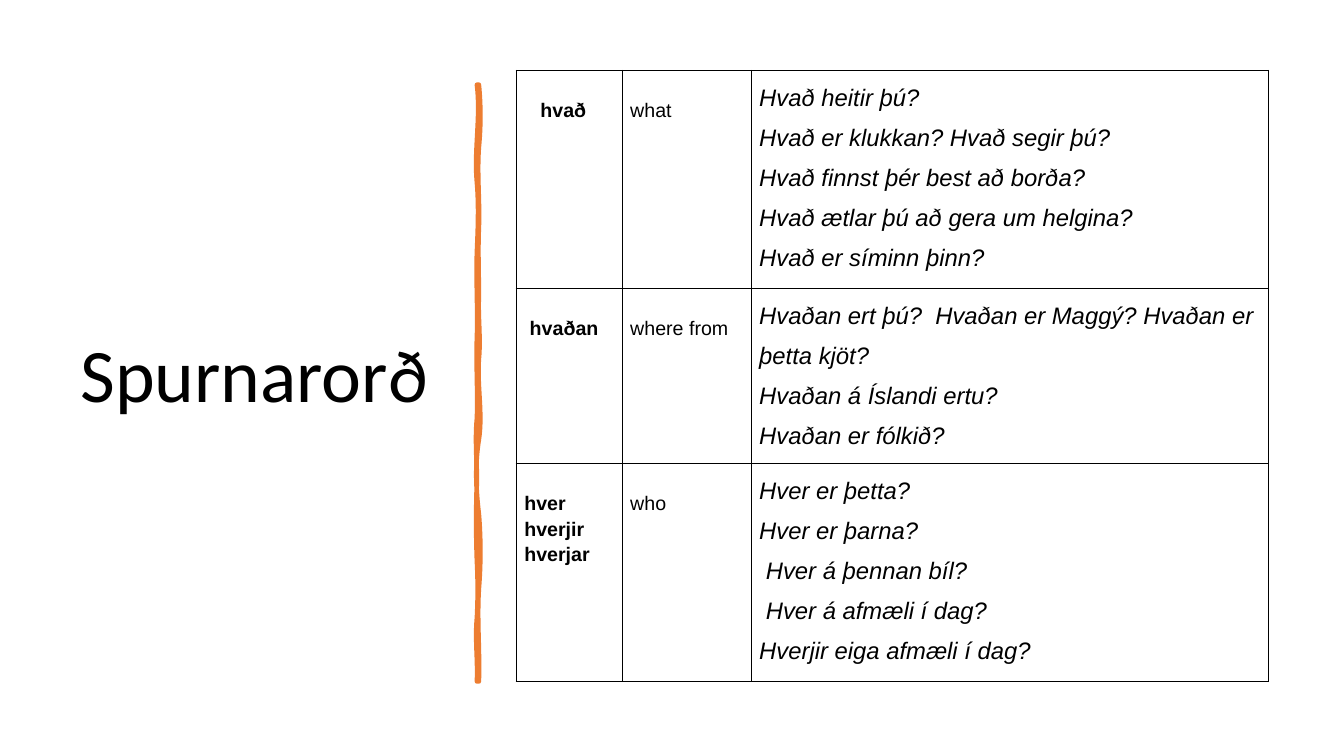
from dataclasses import dataclass
from typing import NamedTuple

from lxml import etree
from pptx import Presentation
from pptx.dml.color import RGBColor
from pptx.enum import text as t
from pptx.oxml import ns
from pptx.util import Emu, Inches, Pt

BLACK = "000000"
ORANGE = "ED7D31"
RULE_TOP, RULE_BOTTOM = 0.84, 6.76
RULE_LEFT, RULE_RIGHT = 4.73, 4.75
COLUMN_WIDTHS = (1.05, 1.28, 5.13)
ROW_HEIGHTS = (2.16, 1.74, 2.16)


class Bend(NamedTuple):
    """One curve of a brush edge: two control x values and the y where it ends."""
    first_x: float
    second_x: float
    end_y: float


class Line(NamedTuple):
    text: str
    indent: float = 0


@dataclass
class CellStyle:
    size: float
    spacing: float
    top: float
    bold: bool = False
    italic: bool = False


@dataclass
class Entry:
    words: list[Line]
    meaning: str
    examples: list[Line]


@dataclass
class Contour:
    right: list[Bend]
    left: list[Bend]
    hidden_part: dict[str, str]


WORD = CellStyle(14, 1.15, 0.26, bold=True)
MEANING = CellStyle(14, 1.15, 0.26)
EXAMPLE = CellStyle(17, 1.5, 0.01, italic=True)

ENTRIES = [
    Entry([Line("hvað", 0.16)], "what", [
        Line("Hvað heitir þú?"),
        Line("Hvað er klukkan? Hvað segir þú?"),
        Line("Hvað finnst þér best að borða?"),
        Line("Hvað ætlar þú að gera um helgina?"),
        Line("Hvað er síminn þinn?")]),
    Entry([Line(" hvaðan")], "where from", [
        Line("Hvaðan ert þú?  Hvaðan er Maggý? Hvaðan er þetta kjöt?"),
        Line("Hvaðan á Íslandi ertu?"),
        Line("Hvaðan er fólkið?")]),
    Entry([Line("hver"), Line("hverjir"), Line("hverjar")], "who", [
        Line("Hver er þetta?"),
        Line("Hver er þarna?"),
        Line(" Hver á þennan bíl?"),
        Line(" Hver á afmæli í dag?"),
        Line("Hverjir eiga afmæli í dag?")]),
]

OUTLINE = Contour(
    [Bend(4.77, 4.77, 1.46), Bend(4.73, 4.76, 2.26), Bend(4.74, 4.75, 2.94),
     Bend(4.74, 4.77, 3.56), Bend(4.73, 4.79, 4.36), Bend(4.71, 4.72, 5.1),
     Bend(4.77, 4.77, 5.84), Bend(4.73, 4.76, RULE_BOTTOM)],
    [Bend(4.74, 4.71, 6.13), Bend(4.74, 4.74, 5.57), Bend(4.72, 4.72, 4.77),
     Bend(4.73, 4.71, 4.15), Bend(4.74, 4.72, 3.35), Bend(4.74, 4.72, 2.5),
     Bend(4.74, 4.75, 1.81), Bend(4.7, 4.77, RULE_TOP)],
    {"fill": "none"})
BODY = Contour(
    [Bend(4.75, 4.72, 1.52), Bend(4.77, 4.74, 2.08), Bend(4.76, 4.74, 2.94),
     Bend(4.76, 4.73, 3.62), Bend(4.77, 4.77, 4.3), Bend(4.72, 4.75, 5.16),
     Bend(4.75, 4.74, 5.78), Bend(4.76, 4.74, RULE_BOTTOM)],
    [Bend(4.7, 4.74, 6.13), Bend(4.72, 4.75, 5.39), Bend(4.71, 4.76, 4.71),
     Bend(4.7, 4.77, 3.86), Bend(4.69, 4.74, 3), Bend(4.71, 4.71, 2.38),
     Bend(4.74, 4.74, 1.64), Bend(4.71, 4.75, RULE_TOP)],
    {"stroke": "0"})


def color(value: str) -> RGBColor:
    return RGBColor.from_string(value)


def add_run(paragraph, wording: str, font_name: str, size: float,
            bold: bool = False, italic: bool = False) -> None:
    run = paragraph.add_run()
    run.text = wording
    font = run.font
    font.name, font.size, font.bold, font.italic = font_name, Pt(size), bold, italic
    font.color.rgb = color(BLACK)


def add_title(slide) -> None:
    title = slide.shapes.add_textbox(Inches(0.7), Inches(0.69), Inches(3.74), Inches(6.11))
    frame = title.text_frame
    frame.word_wrap = True
    frame.vertical_anchor = t.MSO_ANCHOR.MIDDLE
    frame.paragraphs[0].line_spacing = 0.9
    add_run(frame.paragraphs[0], "Spurnarorð", "Calibri", 54)


def add_step(outline, tag: str, points: list[tuple[float, float]]) -> None:
    """Append one path command, with points measured from the rule's top left."""
    step = etree.SubElement(outline, ns.qn(f"a:{tag}"))
    for x, y in points:
        etree.SubElement(step, ns.qn("a:pt"), x=str(Inches(x - RULE_LEFT)),
                         y=str(Inches(y - RULE_TOP)))


def add_edge(outline, x: float, start_y: float, bends: list[Bend]) -> None:
    for bend in bends:
        third = (bend.end_y - start_y) / 3
        add_step(outline, "cubicBezTo", [(bend.first_x, start_y + third),
                                         (bend.second_x, bend.end_y - third),
                                         (x, bend.end_y)])
        start_y = bend.end_y


def add_brush_rule(slide) -> None:
    left, right, top, bottom = map(Inches, (RULE_LEFT, RULE_RIGHT, RULE_TOP, RULE_BOTTOM))
    builder = slide.shapes.build_freeform(right, top)
    builder.add_line_segments([(right, bottom), (left, bottom), (left, top)])
    brush = builder.convert_to_shape()
    brush.shadow.inherit = False
    brush.fill.solid()
    brush.fill.fore_color.rgb = color(ORANGE)
    brush.line.color.rgb = color(ORANGE)
    brush.line.width = Pt(3.25)
    etree.SubElement(brush.line._get_or_add_ln(), ns.qn("a:round"))

    outlines = next(brush._element.iter(ns.qn("a:pathLst")))
    size = {"w": str(right - left), "h": str(bottom - top)}
    outlines.clear()
    for contour in (OUTLINE, BODY):
        outline = etree.SubElement(outlines, ns.qn("a:path"), **size, **contour.hidden_part)
        add_step(outline, "moveTo", [(RULE_RIGHT, RULE_TOP)])
        add_edge(outline, RULE_RIGHT, RULE_TOP, contour.right)
        add_step(outline, "lnTo", [(RULE_LEFT, RULE_BOTTOM)])
        add_edge(outline, RULE_LEFT, RULE_BOTTOM, contour.left)
        add_step(outline, "close", [])


def add_borders(cell) -> None:
    properties = cell._tc.get_or_add_tcPr()
    for side in ("lnL", "lnR", "lnT", "lnB"):
        border = etree.SubElement(properties, ns.qn(f"a:{side}"), w=str(Pt(1)))
        fill = etree.SubElement(border, ns.qn("a:solidFill"))
        etree.SubElement(fill, ns.qn("a:srgbClr"), val=BLACK)


def fill_cell(cell, lines: list[Line], style: CellStyle) -> None:
    add_borders(cell)
    cell.fill.background()
    cell.margin_left = cell.margin_right = Inches(0.08)
    cell.margin_top, cell.margin_bottom = Inches(style.top), Emu(0)
    cell.vertical_anchor = t.MSO_ANCHOR.TOP
    frame = cell.text_frame
    for index, line in enumerate(lines):
        paragraph = frame.add_paragraph() if index else frame.paragraphs[0]
        paragraph.line_spacing = style.spacing
        if line.indent:
            paragraph._p.get_or_add_pPr().set("marL", str(Inches(line.indent)))
        add_run(paragraph, line.text, "Arial", style.size, style.bold, style.italic)


def add_question_table(slide) -> None:
    table = slide.shapes.add_table(
        len(ENTRIES), len(COLUMN_WIDTHS), Inches(5.12), Inches(0.7),
        Inches(sum(COLUMN_WIDTHS)), Inches(sum(ROW_HEIGHTS))).table
    table.first_row = table.horz_banding = False
    for column, width in zip(table.columns, COLUMN_WIDTHS):
        column.width = Inches(width)
    for row, height, entry in zip(table.rows, ROW_HEIGHTS, ENTRIES):
        row.height = Inches(height)
        word, meaning, examples = row.cells
        fill_cell(word, entry.words, WORD)
        fill_cell(meaning, [Line(entry.meaning)], MEANING)
        fill_cell(examples, entry.examples, EXAMPLE)


def main() -> None:
    deck = Presentation()
    deck.slide_width, deck.slide_height = Inches(13.33), Inches(7.5)
    slide = deck.slides.add_slide(deck.slide_layouts[6])
    add_title(slide)
    add_brush_rule(slide)
    add_question_table(slide)
    deck.save("out.pptx")


if __name__ == "__main__":
    main()
